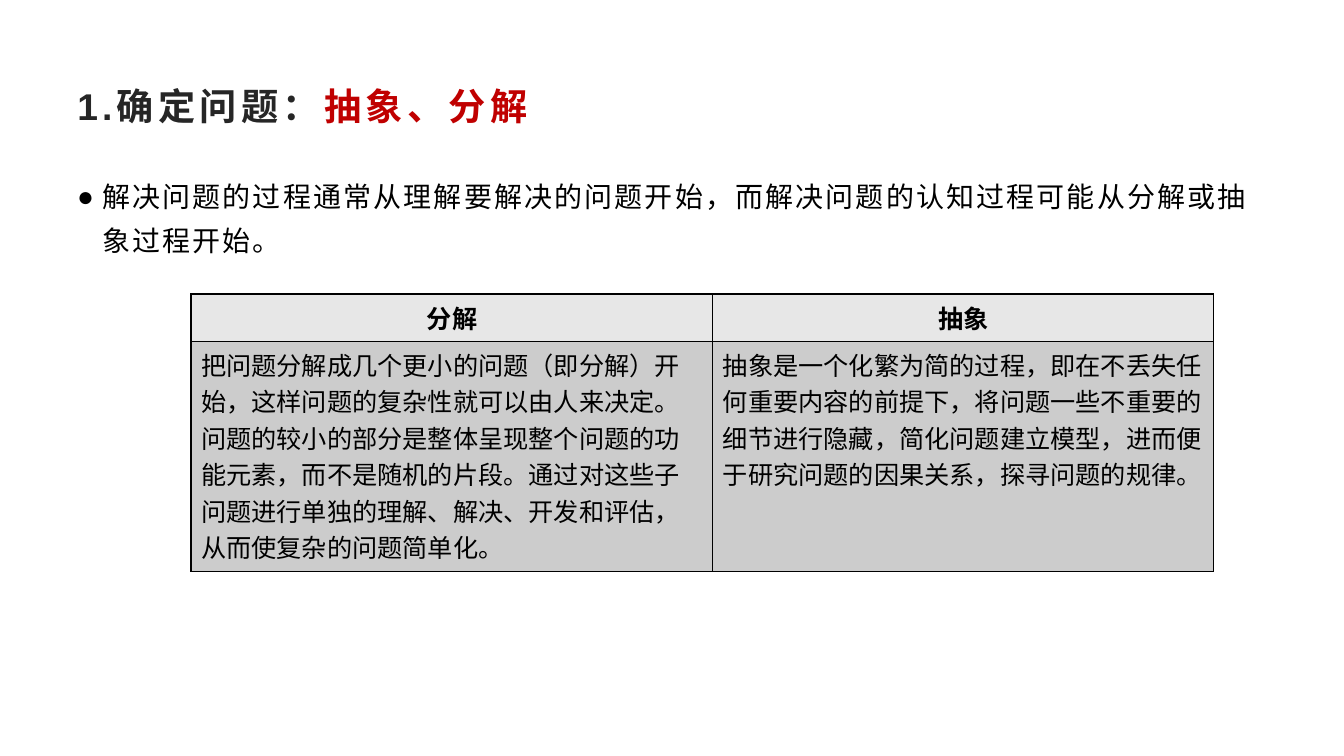
from dataclasses import dataclass

from lxml.etree import SubElement
from pptx import Presentation
from pptx.dml.color import RGBColor
from pptx.enum.text import MSO_ANCHOR, MSO_AUTO_SIZE, PP_ALIGN
from pptx.oxml.ns import qn
from pptx.util import Pt

EMU_PER_PX = 9525


@dataclass(frozen=True)
class Theme:
    font: str = "Arial"
    title_color: str = "262626"
    accent: str = "C00000"
    ink: str = "000000"
    header_fill: str = "E7E7E7"
    cell_fill: str = "CCCCCC"
    title_size: float = 26.6
    body_size: int = 20
    table_size: int = 18


THEME = Theme()


def px(length):
    return length * EMU_PER_PX


def add_run(paragraph, text, size, color, bold=False, spacing=0):
    run = paragraph.add_run()
    run.text = text
    run.font.name = THEME.font
    run.font.size = Pt(size)
    run.font.bold = bold
    run.font.color.rgb = RGBColor.from_string(color)
    if spacing:
        run._r.get_or_add_rPr().set("spc", str(round(spacing * 100)))


def set_bullet(paragraph, character, indent):
    properties = paragraph._p.get_or_add_pPr()
    properties.set("marL", str(px(indent)))
    properties.set("indent", str(-px(indent)))
    SubElement(properties, qn("a:buFont"), typeface=THEME.font)
    SubElement(properties, qn("a:buChar"), char=character)


def set_borders(cell, color, width):
    properties = cell._tc.get_or_add_tcPr()
    for position, side in enumerate(("lnL", "lnR", "lnT", "lnB")):
        line = SubElement(properties, qn(f"a:{side}"), w=str(Pt(width)))
        fill = SubElement(line, qn("a:solidFill"))
        SubElement(fill, qn("a:srgbClr"), val=color)
        properties.insert(position, line)


def format_title(slide, left, top, width, height):
    title = slide.shapes.title
    title.left, title.top, title.width, title.height = map(px, (left, top, width, height))
    frame = title.text_frame
    frame.word_wrap = True
    frame.auto_size = MSO_AUTO_SIZE.NONE
    frame.vertical_anchor = MSO_ANCHOR.MIDDLE
    paragraph = frame.paragraphs[0]
    paragraph.alignment = PP_ALIGN.LEFT
    for text, color in (("1.确定问题：", THEME.title_color), ("抽象、分解", THEME.accent)):
        add_run(paragraph, text, THEME.title_size, color, bold=True, spacing=3)


def add_body(slide, left, top, width, height, text):
    box = slide.shapes.add_textbox(*map(px, (left, top, width, height)))
    frame = box.text_frame
    frame.word_wrap = True
    paragraph = frame.paragraphs[0]
    paragraph.line_spacing = 1.3
    paragraph.space_after = Pt(10)
    set_bullet(paragraph, "●", 24)
    add_run(paragraph, text, THEME.body_size, THEME.ink, spacing=1.5)


def add_comparison(slide, left, top, column_widths, row_heights, rows):
    box = (left, top, sum(column_widths), sum(row_heights))
    table = slide.shapes.add_table(len(rows), len(column_widths), *map(px, box)).table
    for column, width in zip(table.columns, column_widths):
        column.width = px(width)
    for row_index, (height, texts) in enumerate(zip(row_heights, rows)):
        table.rows[row_index].height = px(height)
        is_header = row_index == 0
        for column_index, text in enumerate(texts):
            cell = table.cell(row_index, column_index)
            cell.fill.solid()
            fill = THEME.header_fill if is_header else THEME.cell_fill
            cell.fill.fore_color.rgb = RGBColor.from_string(fill)
            set_borders(cell, THEME.ink, 1)
            paragraph = cell.text_frame.paragraphs[0]
            paragraph.alignment = PP_ALIGN.CENTER if is_header else PP_ALIGN.LEFT
            add_run(paragraph, text, THEME.table_size, THEME.ink, bold=is_header)


def main():
    presentation = Presentation()
    presentation.slide_width, presentation.slide_height = px(1280), px(720)
    slide = presentation.slides.add_slide(presentation.slide_layouts[5])
    format_title(slide, 64, 64, 1152, 74)
    add_body(
        slide, 64, 157, 1152, 499,
        "解决问题的过程通常从理解要解决的问题开始，而解决问题的认知过程可能从分解或抽象过程开始。",
    )
    add_comparison(
        slide, 182, 280, (497, 477), (45, 219),
        (
            ("分解", "抽象"),
            (
                "把问题分解成几个更小的问题（即分解）开始，这样问题的复杂性就可以由人来决定。"
                "问题的较小的部分是整体呈现整个问题的功能元素，而不是随机的片段。"
                "通过对这些子问题进行单独的理解、解决、开发和评估，从而使复杂的问题简单化。",
                "抽象是一个化繁为简的过程，即在不丢失任何重要内容的前提下，"
                "将问题一些不重要的细节进行隐藏，简化问题建立模型，"
                "进而便于研究问题的因果关系，探寻问题的规律。",
            ),
        ),
    )
    presentation.save("out.pptx")


if __name__ == "__main__":
    main()
